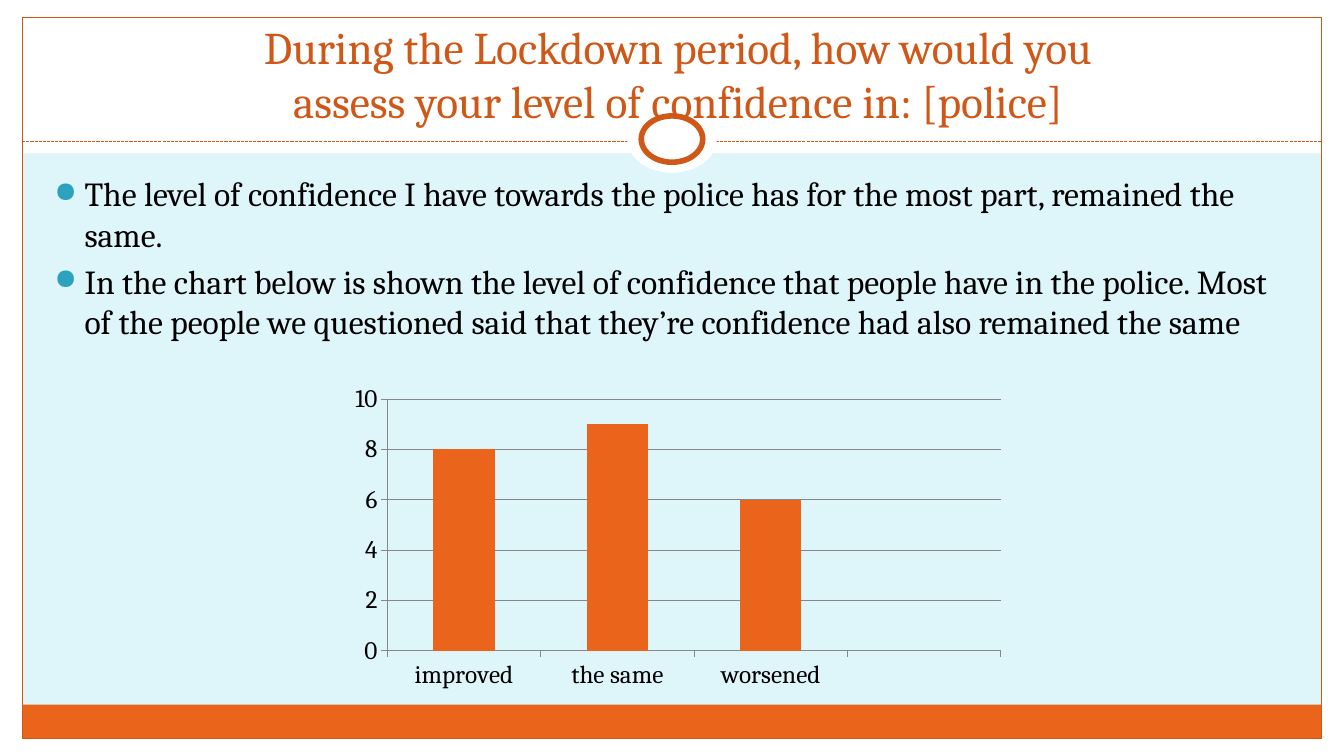
from lxml.etree import SubElement
from pptx import Presentation
from pptx.chart.data import CategoryChartData
from pptx.dml.color import RGBColor
from pptx.enum.chart import XL_CHART_TYPE, XL_TICK_MARK
from pptx.enum.dml import MSO_LINE
from pptx.enum.shapes import MSO_CONNECTOR, MSO_SHAPE
from pptx.enum.text import MSO_ANCHOR, PP_ALIGN
from pptx.oxml.ns import qn
from pptx.util import Inches, Pt

TITLE = "During the Lockdown period, how would you assess your level of confidence in: [police]"
FINDINGS = [
    "The level of confidence I have towards the police has for the most part, remained the same.",
    "In the chart below is shown the level of confidence that people have in the police. "
    "Most of the people we questioned said that they’re confidence had also remained the same",
]
CONFIDENCE = [("improved", 8), ("the same", 9), ("worsened", 6), ("", None)]

FONT = "Cambria"
PALE_BLUE = RGBColor(0xDE, 0xF5, 0xFA)
WHITE = RGBColor(0xFF, 0xFF, 0xFF)
BLACK = RGBColor(0, 0, 0)
ORANGE = RGBColor(0xEB, 0x64, 0x1B)
RUST = RGBColor(0xCF, 0x58, 0x18)
TEAL = "2DA2BF"
GREY = RGBColor(0x87, 0x87, 0x87)

WIDTH, HEIGHT = 13.33, 7.5
SIDE, EDGE = 0.22, 0.17
INNER_WIDTH = WIDTH - 2 * SIDE
HEADER, RULE_Y, FOOTER = 1.52, 1.4, 0.34
RING_X, RING_Y = WIDTH / 2, 1.38
BODY_INDENT = Inches(0.3)

deck = Presentation()
deck.slide_width, deck.slide_height = Inches(WIDTH), Inches(HEIGHT)
slide = deck.slides.add_slide(deck.slide_layouts[6])
slide.background.fill.solid()
slide.background.fill.fore_color.rgb = PALE_BLUE


def add_panel(preset, left, top, width, height, fill=None, line=None, weight=0.75):
    panel = slide.shapes.add_shape(preset, *map(Inches, (left, top, width, height)))
    panel.shadow.inherit = False
    if fill is None:
        panel.fill.background()
    else:
        panel.fill.solid()
        panel.fill.fore_color.rgb = fill
    if line is None:
        panel.line.fill.background()
    else:
        panel.line.color.rgb = line
        panel.line.width = Pt(weight)


def add_text(left, top, width, height):
    frame = slide.shapes.add_textbox(*map(Inches, (left, top, width, height))).text_frame
    frame.word_wrap = True
    return frame


def add_run(paragraph, text, size, color):
    run = paragraph.add_run()
    run.text = text
    run.font.name, run.font.size = FONT, Pt(size)
    run.font.color.rgb = color


def add_bullet(paragraph):
    properties = paragraph._p.get_or_add_pPr()
    properties.set("marL", str(BODY_INDENT))
    properties.set("indent", str(-BODY_INDENT))
    SubElement(SubElement(properties, qn("a:buClr")), qn("a:srgbClr"), val=TEAL)
    SubElement(properties, qn("a:buSzPct"), val="85000")
    SubElement(properties, qn("a:buChar"), char="●")


for margin in [
    (0, HEIGHT - EDGE, WIDTH, EDGE),
    (0, 0, WIDTH, HEADER),
    (0, 0, SIDE, HEIGHT),
    (WIDTH - SIDE, 0, SIDE, HEIGHT),
]:
    add_panel(MSO_SHAPE.RECTANGLE, *margin, fill=WHITE)
add_panel(MSO_SHAPE.RECTANGLE, SIDE, HEIGHT - EDGE - FOOTER, INNER_WIDTH, FOOTER, fill=ORANGE)
add_panel(MSO_SHAPE.RECTANGLE, SIDE, EDGE, INNER_WIDTH, HEIGHT - 2 * EDGE, line=RUST)

rule = slide.shapes.add_connector(
    MSO_CONNECTOR.STRAIGHT, *map(Inches, (SIDE, RULE_Y, WIDTH - SIDE, RULE_Y))
)
rule.line.color.rgb = RUST
rule.line.width = Pt(0.75)
rule.line.dash_style = MSO_LINE.SQUARE_DOT
SubElement(rule._element.spPr, qn("a:effectLst"))

for ring_width, ring_height, ring_line in [(0.89, 0.67, None), (0.61, 0.46, RUST)]:
    add_panel(MSO_SHAPE.OVAL, RING_X - ring_width / 2, RING_Y - ring_height / 2,
              ring_width, ring_height, fill=WHITE, line=ring_line, weight=4)

title = add_text(2.06, 1.02, 9.33, 0.83)
title.vertical_anchor = MSO_ANCHOR.BOTTOM
title.margin_bottom = Inches(0.58)
title.paragraphs[0].alignment = PP_ALIGN.CENTER
add_run(title.paragraphs[0], TITLE, 32.4, RUST)

body = add_text(0.44, 1.67, 12.4, 5)
for number, finding in enumerate(FINDINGS):
    paragraph = body.add_paragraph() if number else body.paragraphs[0]
    paragraph.space_before = Pt(4.8)
    add_bullet(paragraph)
    add_run(paragraph, finding, 24, BLACK)

answers = CategoryChartData(number_format="General")
answers.categories = [answer for answer, count in CONFIDENCE]
answers.add_series("Series 1", [count for answer, count in CONFIDENCE])
chart = slide.shapes.add_chart(
    XL_CHART_TYPE.COLUMN_CLUSTERED, *map(Inches, (3.39, 3.75, 6.67, 3.16)), answers
).chart
chart.has_legend = chart.has_title = False
chart.font.name, chart.font.size = FONT, Pt(18)
chart.font.color.rgb = BLACK

columns = chart.plots[0]
columns.gap_width = 150
columns.vary_by_categories = False
columns.series[0].format.fill.solid()
columns.series[0].format.fill.fore_color.rgb = ORANGE

counts = chart.value_axis
counts.minimum_scale, counts.maximum_scale, counts.major_unit = 0, 10, 2
counts.has_major_gridlines = True
counts.major_gridlines.format.line.color.rgb = GREY
for axis in (chart.category_axis, counts):
    axis.major_tick_mark = XL_TICK_MARK.OUTSIDE
    axis.minor_tick_mark = XL_TICK_MARK.NONE
    axis.format.line.color.rgb = GREY

deck.save("out.pptx")
